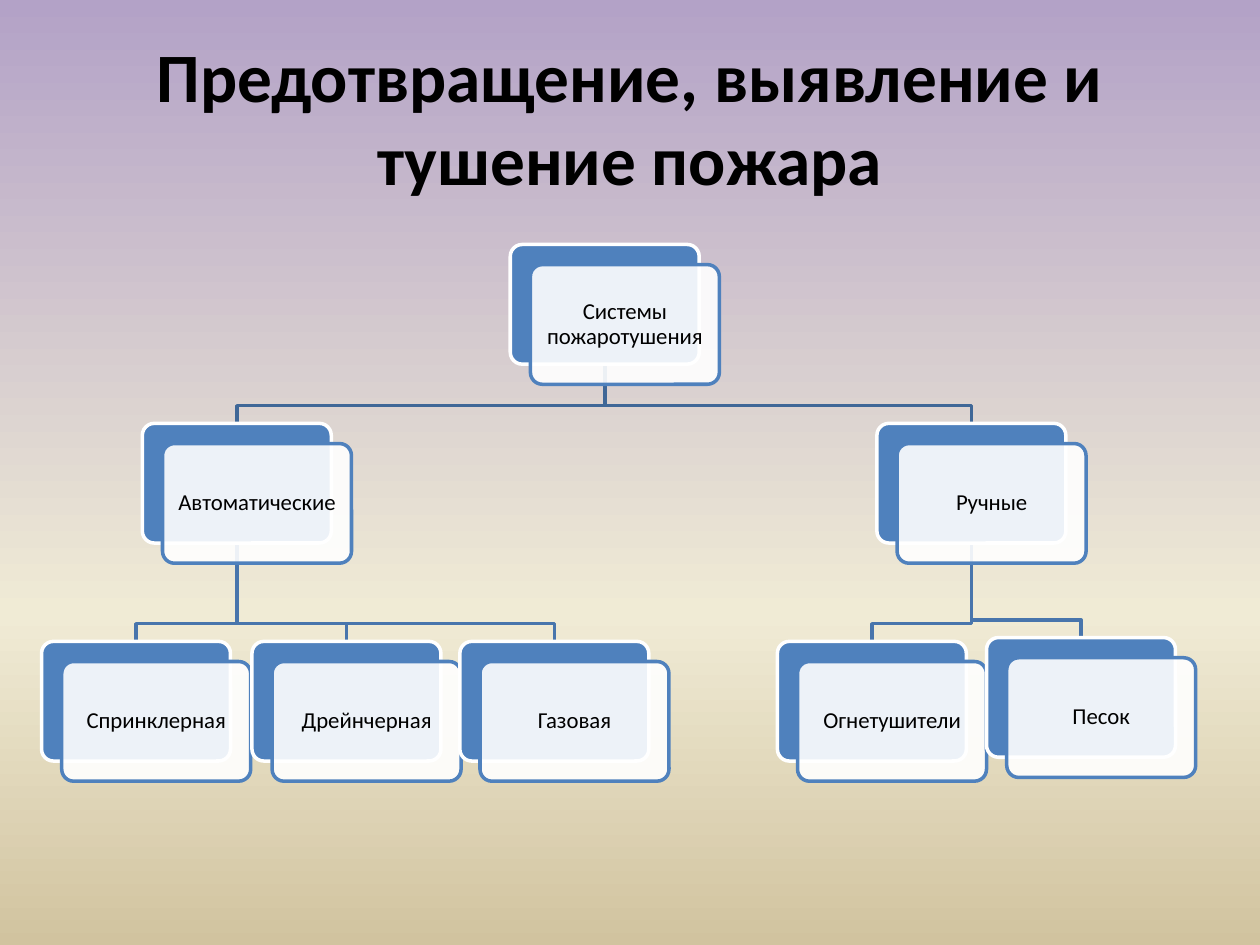
from copy import deepcopy
from dataclasses import dataclass

from pptx import Presentation
from pptx.dml.color import RGBColor
from pptx.enum.shapes import MSO_SHAPE as Preset
from pptx.enum.text import MSO_ANCHOR as Anchor, PP_ALIGN as Align
from pptx.oxml.ns import qn
from pptx.oxml.xmlchemy import OxmlElement
from pptx.shapes.autoshape import Shape
from pptx.slide import Slide
from pptx.util import Inches, Pt

COLORS = {
    "card": "4F81BD",
    "white": "FFFFFF",
    "text": "000000",
    "upper_link": "3F6797",
    "lower_link": "4875AC",
}
BACKGROUND = ((0, "B3A2C7"), (0.65, "F0EBD5"), (1, "D1C39F"))
FONT = "Calibri"
CARD_WIDTH, CARD_HEIGHT = 1.5, 0.95
FRONT_SHIFT = 0.16
ELBOW_RISE = 0.14


@dataclass(frozen=True)
class Node:
    label: str
    left: float
    top: float
    children: tuple["Node", ...] = ()

    @property
    def center(self) -> float:
        return self.left + CARD_WIDTH / 2


TREE = Node("Системы пожаротушения", 4.05, 1.94, (
    Node("Автоматические", 1.13, 3.36, (
        Node("Спринклерная", 0.33, 5.09),
        Node("Дрейнчерная", 2.0, 5.09),
        Node("Газовая", 3.65, 5.09),
    )),
    Node("Ручные", 6.96, 3.36, (
        Node("Огнетушители", 6.17, 5.09),
        Node("Песок", 7.83, 5.06),
    )),
))


def rgb(value: str) -> RGBColor:
    return RGBColor.from_string(value)


def paint_background(slide: Slide) -> None:
    fill = slide.background.fill
    fill.gradient()
    fill.gradient_angle = 270
    stop_list = slide.element.find(".//" + qn("a:gsLst"))
    stop_list.append(deepcopy(stop_list[0]))
    for stop, (position, color) in zip(fill.gradient_stops, BACKGROUND):
        stop.position = position
        stop.color.rgb = rgb(color)


def write(shape: Shape, text: str, size: float, bold: bool = False) -> None:
    frame = shape.text_frame
    frame.word_wrap = True
    frame.vertical_anchor = Anchor.MIDDLE
    para = frame.paragraphs[0]
    para.text = text
    para.alignment = Align.CENTER
    para.font.name = FONT
    para.font.size = Pt(size)
    para.font.bold = bold
    para.font.color.rgb = rgb(COLORS["text"])


def add_title(slide: Slide, text: str) -> None:
    box = slide.shapes.add_textbox(Inches(0.5), Inches(0.3), Inches(9), Inches(1.25))
    write(box, text, 39.6, bold=True)


def add_links(slide: Slide, parent: Node, color: str) -> None:
    """Draw elbow lines from a node to its children, deeper levels first."""
    for child in reversed(parent.children):
        add_links(slide, child, COLORS["lower_link"])
        start = parent.top + CARD_HEIGHT
        elbow = child.top - ELBOW_RISE
        builder = slide.shapes.build_freeform(Inches(parent.center), Inches(start))
        corners = ((parent.center, elbow), (child.center, elbow), (child.center, child.top))
        builder.add_line_segments([(Inches(x), Inches(y)) for x, y in corners], close=False)
        link = builder.convert_to_shape()
        link.shadow.inherit = False
        link.fill.background()
        link.line.color.rgb = rgb(color)
        link.line.width = Pt(2)


def add_card(slide: Slide, left: float, top: float, fill: str, line: str) -> Shape:
    card = slide.shapes.add_shape(Preset.ROUNDED_RECTANGLE, Inches(left), Inches(top),
                                  Inches(CARD_WIDTH), Inches(CARD_HEIGHT))
    card.adjustments[0] = 0.1
    card.shadow.inherit = False
    card.fill.solid()
    card.fill.fore_color.rgb = rgb(fill)
    card.line.color.rgb = rgb(line)
    card.line.width = Pt(2)
    return card


def set_opacity(shape: Shape, percent: int) -> None:
    alpha = OxmlElement("a:alpha")
    alpha.set("val", str(percent * 1000))
    shape.element.spPr.find(qn("a:solidFill"))[0].append(alpha)


def add_node(slide: Slide, node: Node) -> None:
    """Draw a node as a blue card under a labelled card, then its children."""
    add_card(slide, node.left, node.top, COLORS["card"], COLORS["white"])
    front = add_card(slide, node.left + FRONT_SHIFT, node.top + FRONT_SHIFT,
                     COLORS["white"], COLORS["card"])
    set_opacity(front, 90)
    write(front, node.label, 13)
    frame = front.text_frame
    frame.margin_left = frame.margin_right = Inches(0.05)
    frame.margin_top = frame.margin_bottom = Inches(0.05)
    frame.paragraphs[0].line_spacing = 0.9
    for child in node.children:
        add_node(slide, child)


def main() -> None:
    deck = Presentation()
    deck.slide_width, deck.slide_height = Inches(10), Inches(7.5)
    slide = deck.slides.add_slide(deck.slide_layouts[6])
    paint_background(slide)
    add_title(slide, "Предотвращение, выявление и тушение пожара")
    add_links(slide, TREE, COLORS["upper_link"])
    add_node(slide, TREE)
    deck.save("out.pptx")


if __name__ == "__main__":
    main()
